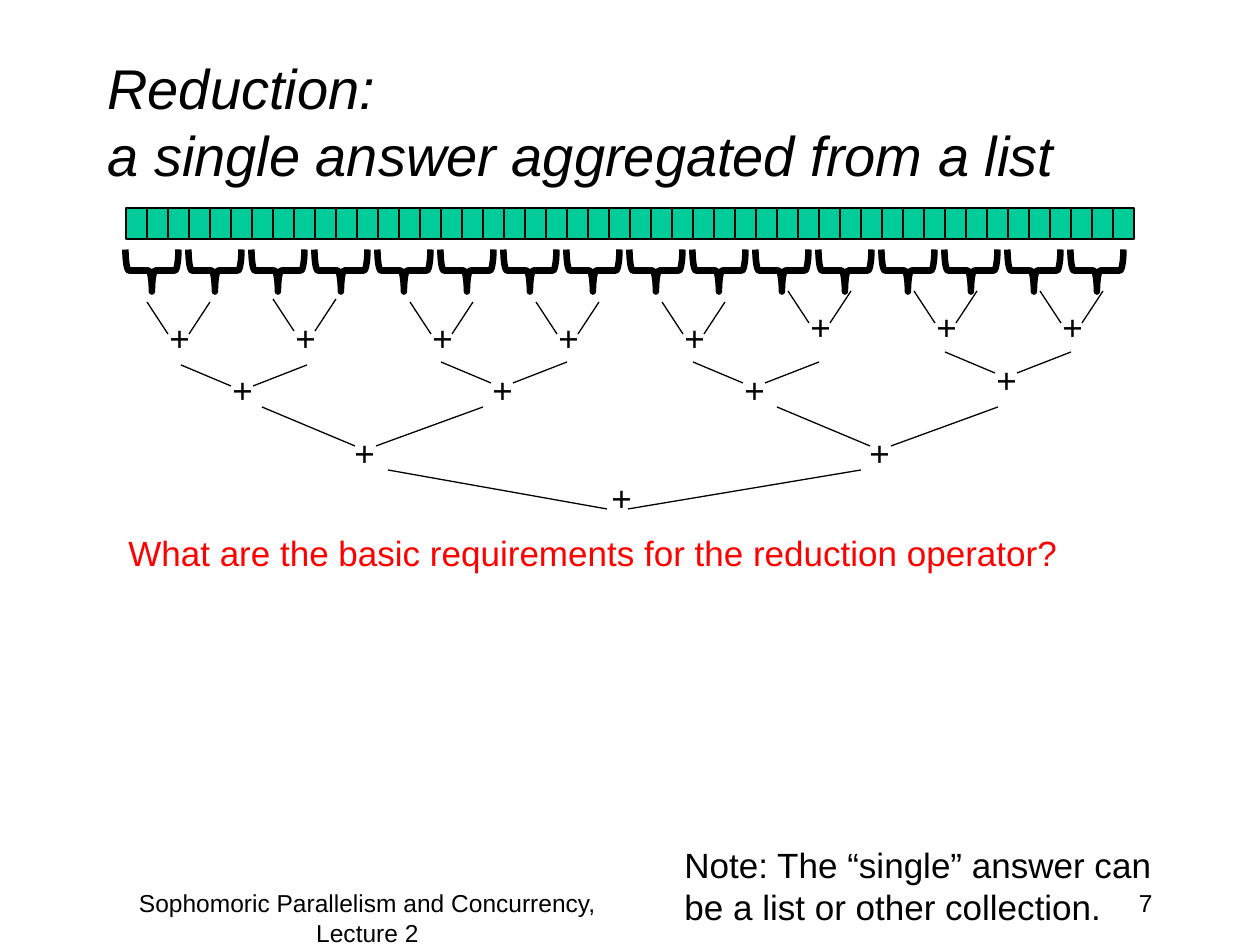
from pptx import Presentation
from pptx import util as u
from pptx.dml.color import RGBColor
from pptx.enum import shapes, text
from pptx.oxml.ns import qn
from lxml import etree

HUES = {"ink": "000000", "cell": "00CC99", "ask": "FF0000"}
LEFT, MID, RIGHT = text.PP_ALIGN.LEFT, text.PP_ALIGN.CENTER, text.PP_ALIGN.RIGHT

TITLE = "Reduction: \va single answer aggregated from a list"
ASK = "What are the basic requirements for the reduction operator?"
NOTE = "Note: The “single” answer can be a list or other collection."
FOOT = "Sophomoric Parallelism and Concurrency, Lecture 2"
PAGE = "7"

CELLS, BRACES = 48, 16
LEVELS = [
    {"span": 63, "feet": (21, 42), "drop": 32, "plus": (10, 8),
     "at": [(147, 302), (273, 299), (410, 302), (536, 302),
            (662, 302), (788, 291), (914, 291), (1040, 291)]},
    {"span": 126, "feet": (50, 72), "drop": 21, "plus": (39, 0),
     "at": [(181, 365), (441, 362), (693, 362), (945, 352)]},
    {"span": 221, "feet": (93, 114), "drop": 39, "plus": (80, 18),
     "at": [(262, 407), (777, 407)]},
    {"span": 473, "feet": (219, 240), "drop": 39, "plus": (211, 0),
     "at": [(388, 470)]},
]


def px(n):
    return u.Emu(round(n * 914400 / 126))


def hue(name):
    return RGBColor.from_string(HUES[name])


def label(words, x, y, w, h, size=20, tone="ink", align=LEFT, wrap=True):
    box = slide.shapes.add_textbox(px(x), px(y), px(w), px(h))
    frame = box.text_frame
    frame.word_wrap = wrap
    frame.text = words
    para = frame.paragraphs[0]
    para.alignment = align
    font = para.font
    font.name, font.size = "Arial", u.Pt(size)
    font.color.rgb = hue(tone)
    return frame


def shape(kind, x, y, w, h, line, fill=None):
    form = slide.shapes.add_shape(kind, px(x), px(y), px(w), px(h))
    form.shadow.inherit = False
    form.line.color.rgb = hue("ink")
    form.line.width = u.Pt(line)
    if fill:
        form.fill.solid()
        form.fill.fore_color.rgb = hue(fill)
    else:
        form.fill.background()
    return form


def link(x1, y1, x2, y2):
    line = slide.shapes.add_connector(
        shapes.MSO_CONNECTOR.STRAIGHT, px(x1), px(y1), px(x2), px(y2))
    line.line.color.rgb = hue("ink")
    line.line.width = u.Pt(0.75)
    etree.SubElement(line._element.spPr, qn("a:effectLst"))


def join(x, y, level):
    low = y + level["drop"]
    for top, foot in zip((0, level["span"]), level["feet"]):
        link(x + top, y, x + foot, low)
    dx, dy = level["plus"]
    if (x, y) == (273, 299):
        dy += 3
    label("+", x + dx, y + dy - (3 if (x, y) == (181, 365) else 0),
          45, 55, wrap=False)


deck = Presentation()
deck.slide_width, deck.slide_height = px(1260), px(945)
slide = deck.slides.add_slide(deck.slide_layouts[6])

head = label(TITLE, 95, 42, 1071, 157, size=32)
head.vertical_anchor = text.MSO_ANCHOR.MIDDLE
head.paragraphs[0].font.italic = True
label(PAGE, 903, 882, 262, 63, size=14, align=RIGHT)
label(FOOT, 84, 882, 567, 63, size=14, align=MID)

for i in range(CELLS):
    shape(shapes.MSO_SHAPE.RECTANGLE, 126 + 21 * i, 208, 21, 31, 0.75, "cell")
for i in range(BRACES):
    brace = shape(shapes.MSO_SHAPE.LEFT_BRACE, 131 + 63 * i, 244, 42, 53, 3.75)
    brace.rotation = 270
for level in LEVELS:
    for x, y in level["at"]:
        join(x, y, level)

ask = label(ASK, 116, 525, 1071, 105, tone="ask")
ask.paragraphs[0].space_before = u.Pt(4)
label(NOTE, 672, 837, 525, 97)

deck.save("out.pptx")
